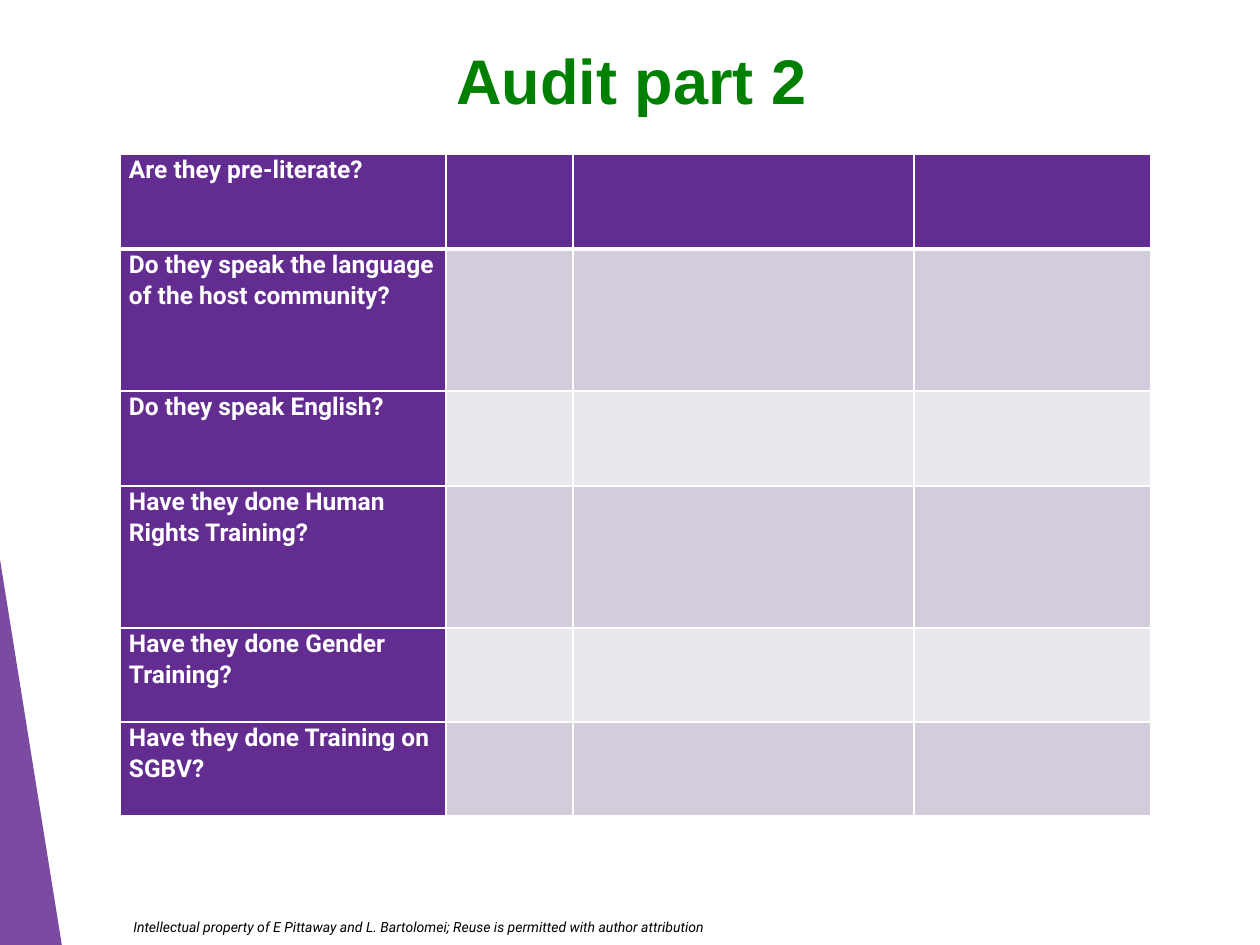
from lxml.etree import SubElement
from pptx import Presentation
from pptx.dml.color import RGBColor
from pptx.enum.text import MSO_ANCHOR, PP_ALIGN
from pptx.oxml.ns import qn
from pptx.util import Emu, Pt

PURPLE, WHITE, GREEN, BLACK = "632C90", "FFFFFF", "008000", "000000"
BANDS = ["D3CDDB", "EAE8EE"]
QUESTIONS = [
    "Are they pre-literate?",
    "Do they speak the language of the host community?",
    "Do they speak English?",
    "Have they done Human Rights Training?",
    "Have they done Gender Training?",
    "Have they done Training on SGBV?",
]
COLUMNS = [326, 127, 341, 237]
ROWS = [95, 142, 95, 142, 94, 94]


def px(length):
    return Emu(round(length * 914400 / 126))


def color(value):
    return RGBColor.from_string(value)


class AuditSlide:
    body_font = "Roboto"
    title_font = "Arial"

    def __init__(self, deck):
        self.slide = deck.slides.add_slide(deck.slide_layouts[5])

    def style(self, paragraph, face, size, fill, bold=False, italic=False):
        font = paragraph.font
        font.name, font.size = face, Pt(size)
        font.bold, font.italic = bold, italic
        font.color.rgb = color(fill)

    def wedge(self, points, fill, opacity):
        corners = [(px(x), px(y)) for x, y in points]
        builder = self.slide.shapes.build_freeform(*corners[0])
        builder.add_line_segments(corners[1:], close=True)
        wedge = builder.convert_to_shape()
        wedge.shadow.inherit = False
        wedge.line.fill.background()
        wedge.fill.solid()
        wedge.fill.fore_color.rgb = color(fill)
        tint = wedge.fill._xPr.find(qn("a:solidFill"))[0]
        SubElement(tint, qn("a:alpha"), val=str(opacity * 1000))

    def footer(self, text, left, top, width, height):
        box = self.slide.shapes.add_textbox(px(left), px(top), px(width), px(height))
        box.text_frame.word_wrap = True
        credit = box.text_frame.paragraphs[0]
        credit.text = text
        self.style(credit, self.body_font, 8, BLACK, italic=True)

    def title(self, text, left, top, width, height):
        title = self.slide.shapes.title
        title.left, title.top = px(left), px(top)
        title.width, title.height = px(width), px(height)
        frame = title.text_frame
        frame.vertical_anchor = MSO_ANCHOR.BOTTOM
        frame.margin_bottom = px(4)
        heading = frame.paragraphs[0]
        heading.text = text
        heading.alignment = PP_ALIGN.CENTER
        self.style(heading, self.title_font, 36, GREEN, bold=True)

    def borders(self, cell, top=1, bottom=1):
        properties = cell._tc.get_or_add_tcPr()
        sides = [("lnL", 1), ("lnR", 1), ("lnT", top), ("lnB", bottom)]
        for index, (side, width) in enumerate(sides):
            line = SubElement(properties, qn(f"a:{side}"), w=str(Pt(width)))
            solid = SubElement(line, qn("a:solidFill"))
            SubElement(solid, qn("a:srgbClr"), val=WHITE)
            properties.insert(index, line)

    def question(self, cell, text):
        cell.margin_left = cell.margin_right = px(9)
        cell.margin_top = cell.margin_bottom = 0
        paragraph = cell.text_frame.paragraphs[0]
        paragraph.text = text
        paragraph.line_spacing = 1.07
        paragraph.space_after = Pt(8)
        self.style(paragraph, self.body_font, 14, WHITE, bold=True)

    def audit_table(self, left, top):
        table = self.slide.shapes.add_table(
            len(ROWS), len(COLUMNS), px(left), px(top), px(sum(COLUMNS)), px(sum(ROWS))
        ).table
        for column, width in zip(table.columns, COLUMNS):
            column.width = px(width)
        for r, (row, height) in enumerate(zip(table.rows, ROWS)):
            row.height = px(height)
            for c, cell in enumerate(row.cells):
                cell.fill.solid()
                header = r == 0 or c == 0
                cell.fill.fore_color.rgb = color(PURPLE if header else BANDS[(r - 1) % 2])
                self.borders(cell, top=3 if r == 1 else 1, bottom=3 if r == 0 else 1)
            self.question(row.cells[0], QUESTIONS[r])


def main():
    deck = Presentation()
    deck.slide_width, deck.slide_height = px(1260), px(945)
    audit = AuditSlide(deck)
    audit.wedge([(-1, 553), (62, 946), (-1, 945)], PURPLE, 85)
    audit.footer(
        "Intellectual property of E Pittaway and L. Bartolomei; "
        "Reuse is permitted with author attribution",
        121, 912, 731, 29,
    )
    audit.title("Audit part 2", 95, 34, 1073, 87)
    audit.audit_table(120, 154)
    deck.save("out.pptx")


if __name__ == "__main__":
    main()
